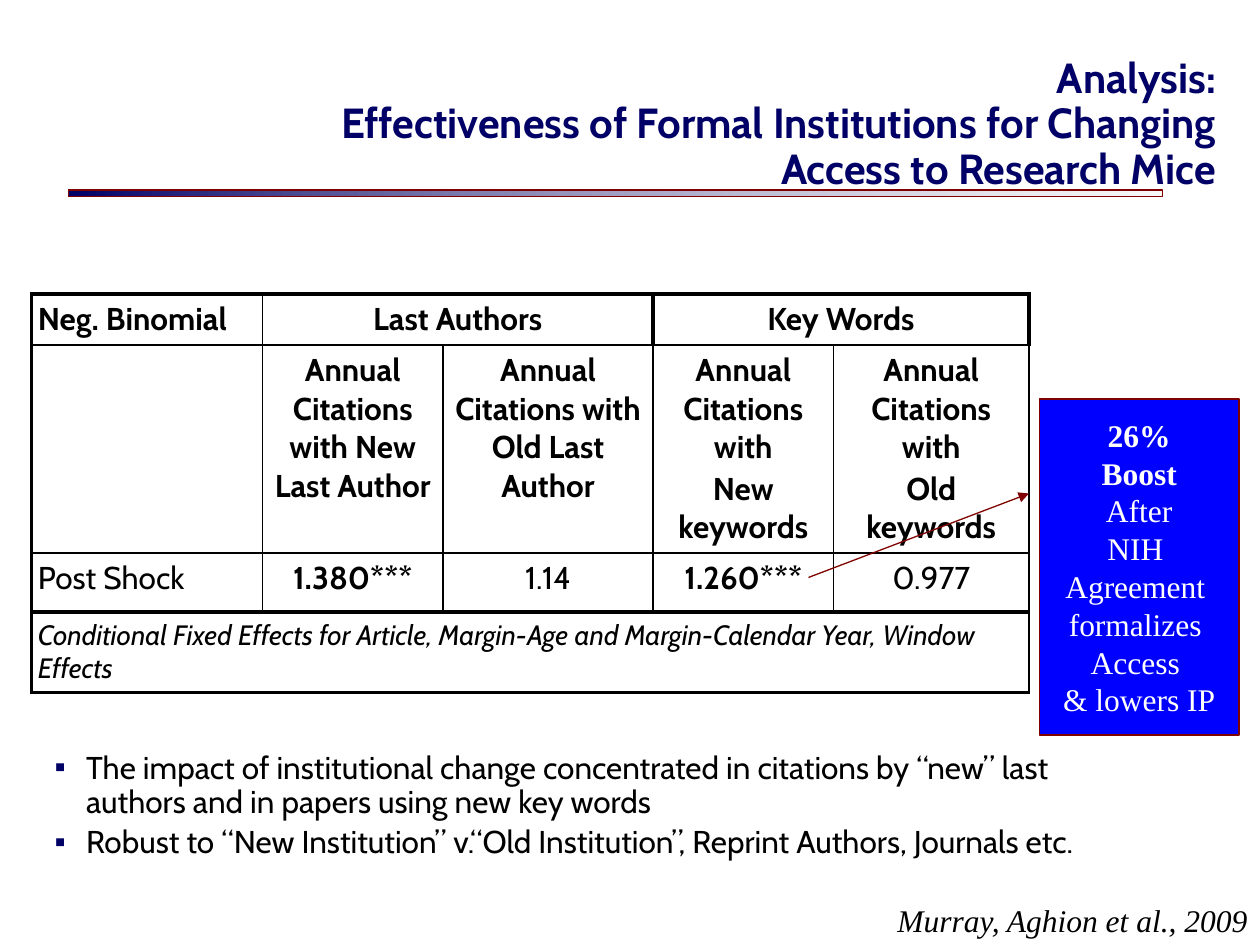
import pptx
import pptx.util
import pptx.dml.color
import pptx.enum.shapes
import pptx.enum.text
import pptx.oxml
import pptx.oxml.ns
from lxml import etree

Pt = pptx.util.Pt
ALIGN = pptx.enum.text.PP_ALIGN
ANCHOR = pptx.enum.text.MSO_ANCHOR
AUTO = pptx.enum.text.MSO_AUTO_SIZE
RECT = pptx.enum.shapes.MSO_SHAPE.RECTANGLE
NAVY, MAROON, BLUE, BLACK, WHITE = "000066", "800000", "0000FF", "000000", "FFFFFF"
SANS, SERIF = "Cabin", "Times New Roman"

COLS = (22, 17.2, 20, 17.2, 18.6)
ROWS = (4, 5.6, 5.6, 6.1)
CELLS = [  # row, column, span, paragraphs, format
    (0, 0, 1, ["Neg. Binomial"], {"bold": True}),
    (0, 1, 2, ["Last Authors"], {"bold": True}),
    (0, 3, 2, ["Key Words"], {"bold": True}),
    (1, 0, 1, [], {}),
    (1, 1, 1, ["Annual Citations with New Last Author"], {"bold": True}),
    (1, 2, 1, ["Annual Citations with Old Last Author"], {"bold": True}),
    (1, 3, 1, ["Annual Citations with", "New keywords"], {"bold": True}),
    (1, 4, 1, ["Annual Citations with", "Old keywords"], {"bold": True}),
    (2, 0, 1, ["Post Shock"], {}),
    (2, 1, 1, ["1.380***"], {"bold": True}),
    (2, 2, 1, ["1.14"], {}),
    (2, 3, 1, ["1.260***"], {"bold": True}),
    (2, 4, 1, ["0.977"], {}),
    (3, 0, 5, ["Conditional Fixed Effects for Article, Margin-Age and "
               "Margin-Calendar Year, Window Effects"], {"size": Pt(16), "italic": True}),
]
ROW_EDGES = (2.25, 1, 1, 3, 2.25)
HEADER_EDGES = (2.25, 1, 1, 2.25, 1, 2.25)
BODY_EDGES = (2.25, 1, 1, 1, 1, 1)


def unit(n):
    """Length of n grid cells; the slide is 120 cells wide and 90 high."""
    return pptx.util.Inches(n / 12)


def rgb(value):
    return pptx.dml.color.RGBColor.from_string(value)


def xml(parent, tag, **attrs):
    node = etree.SubElement(parent, pptx.oxml.ns.qn(tag))
    for key, value in attrs.items():
        node.set(key, str(value))
    return node


def place(sp, box):
    for name, n in zip(("left", "top", "width", "height"), box):
        setattr(sp, name, unit(n))


def write(tf, lines, color, para=None, **font):
    """Fill a text frame with one formatted paragraph per line."""
    for i, line in enumerate(lines):
        p = tf.paragraphs[0] if i == 0 else tf.add_paragraph()
        p.text = line
        for name, value in (para or {}).items():
            setattr(p, name, value)
        for r in p.runs:
            r.font.color.rgb = rgb(color)
            for name, value in {"size": Pt(18), "name": SANS, **font}.items():
                setattr(r.font, name, value)


def outline(sp):
    sp.line.color.rgb = rgb(MAROON)
    sp.line.width = Pt(0.75)


def add_box(s, box):
    sp = s.shapes.add_shape(RECT, *map(unit, box))
    sp.shadow.inherit = False
    outline(sp)
    return sp


def add_rule(s, box):
    sp = add_box(s, box)
    sp.fill.gradient()
    sp.fill.gradient_angle = 0
    stops = sp.fill.gradient_stops
    for stop, color, position in zip(stops, (NAVY, "EAEAEA"), (0, 1)):
        stop.color.rgb = rgb(color)
        stop.position = position
    xml(sp._element.spPr.findall(".//" + pptx.oxml.ns.qn("a:srgbClr"))[1],
        "a:alpha", val=37000)


def add_title(s, box):
    sp = s.shapes.title
    place(sp, box)
    tf = sp.text_frame
    tf.vertical_anchor, tf.auto_size, tf.word_wrap = ANCHOR.BOTTOM, AUTO.NONE, True
    write(tf, ["Analysis:\vEffectiveness of Formal Institutions for Changing "
               "Access to Research Mice"], NAVY,
          {"alignment": ALIGN.RIGHT, "line_spacing": 0.9}, size=Pt(24), bold=True)


def set_borders(cell, widths):
    tc_pr = cell._tc.get_or_add_tcPr()
    for side, width in zip("LRTB", widths):
        ln = xml(tc_pr, "a:ln" + side, w=Pt(width))
        xml(xml(ln, "a:solidFill"), "a:srgbClr", val=BLACK)


def add_results(s, box):
    frame = s.shapes.add_table(len(ROWS), len(COLS), *map(unit, box))
    table = frame.table
    table.first_row = table.horz_banding = False
    style = table._tbl.tblPr.find(pptx.oxml.ns.qn("a:tableStyleId"))
    style.text = "{2D5ABB26-0587-4C30-8999-92F81FD0307C}"
    for col, n in zip(table.columns, COLS):
        col.width = unit(n)
    for row, n in zip(table.rows, ROWS):
        row.height = unit(n)
    frame.height = unit(box[3])
    for r, c, span, lines, font in CELLS:
        cell = table.cell(r, c)
        if span > 1:
            cell.merge(table.cell(r, c + span - 1))
        for side in ("left", "right", "top", "bottom"):
            setattr(cell, "margin_" + side, pptx.util.Inches(0.05))
        write(cell.text_frame, lines, BLACK,
              {"alignment": ALIGN.CENTER if c else ALIGN.LEFT, "space_before": Pt(1.8)},
              **{"bold": False, **font})
        edges = BODY_EDGES if r else HEADER_EDGES
        set_borders(cell, (edges[c], edges[c + span], ROW_EDGES[r], ROW_EDGES[r + 1]))
        cell.fill.background()


def add_findings(s, box):
    sp = s.placeholders[1]
    place(sp, box)
    tf = sp.text_frame
    tf.auto_size, tf.word_wrap = AUTO.NONE, True
    write(tf, ["The impact of institutional change concentrated in citations by “new” "
               "last authors and in papers using new key words",
               "Robust to “New Institution” v.“Old Institution”, Reprint Authors, "
               "Journals etc."], BLACK, {"line_spacing": 0.9, "space_before": Pt(3.6)})
    for p in tf.paragraphs:
        p_pr = p._p.get_or_add_pPr()
        p_pr.set("marL", str(unit(3)))
        p_pr.set("indent", str(-unit(3)))
        xml(xml(p_pr, "a:buClr"), "a:srgbClr", val=NAVY)
        xml(p_pr, "a:buFont", typeface="Arial")
        xml(p_pr, "a:buChar", char="▪")


def add_citation(s, box):
    tf = s.shapes.add_textbox(*map(unit, box)).text_frame
    tf.word_wrap, tf.auto_size = True, AUTO.SHAPE_TO_FIT_TEXT
    write(tf, ["Murray, Aghion et al., 2009"], BLACK, {"alignment": ALIGN.RIGHT},
          name=SERIF, italic=True)


def add_callout(s, box):
    sp = add_box(s, box)
    sp.fill.solid()
    sp.fill.fore_color.rgb = rgb(BLUE)
    tf = sp.text_frame
    tf.word_wrap, tf.vertical_anchor = False, ANCHOR.MIDDLE
    write(tf, ["26%", "Boost", "After", "NIH ", "Agreement ", "formalizes ",
               "Access ", "& lowers IP"], WHITE, {"alignment": ALIGN.CENTER}, name=SERIF)
    for p in tf.paragraphs[:2]:
        p.runs[0].font.bold = True


def add_arrow(s, ends):
    line = s.shapes.add_connector(pptx.enum.shapes.MSO_CONNECTOR.STRAIGHT, *map(unit, ends))
    outline(line)
    xml(line.line._get_or_add_ln(), "a:tailEnd", type="triangle")
    xml(line._element.spPr, "a:effectLst")


def main():
    prs = pptx.Presentation()
    prs.slide_width, prs.slide_height = unit(120), unit(90)
    s = prs.slides.add_slide(prs.slide_layouts[1])
    add_rule(s, (6.5, 18.1, 104.2, 0.6))
    add_title(s, (21, 4, 96, 15))
    add_results(s, (3, 28, 95, 41.2))
    add_findings(s, (4, 71, 107, 9))
    add_citation(s, (38, 85.2, 82, 4.8))
    add_callout(s, (99, 38, 19, 32))
    add_arrow(s, (77, 55, 98, 47))
    prs.save("out.pptx")


if __name__ == "__main__":
    main()
